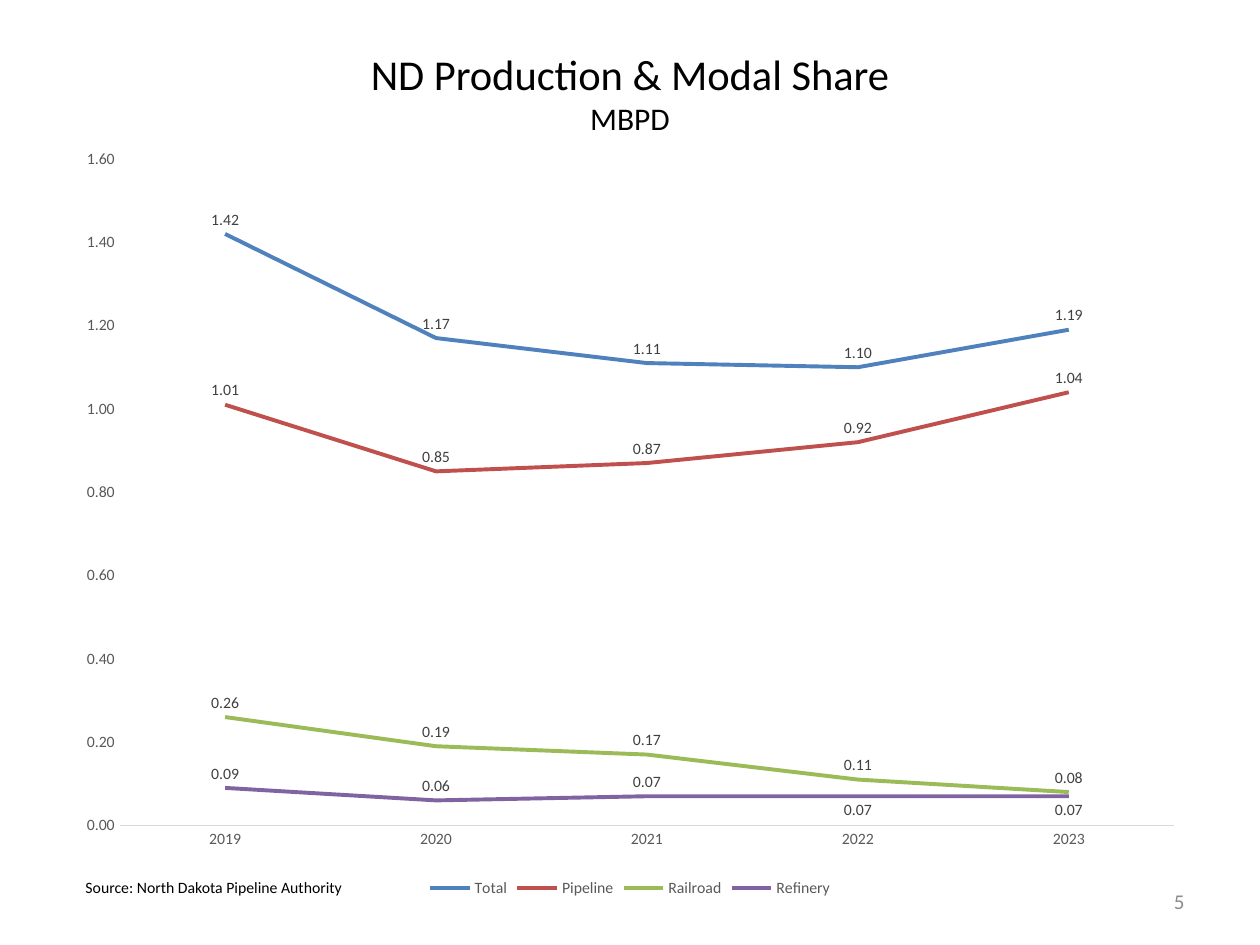
from lxml import etree
from pptx import Presentation
from pptx.chart.data import CategoryChartData
from pptx.dml.color import RGBColor
from pptx.enum.chart import XL_CHART_TYPE as ChartType, XL_LABEL_POSITION as LabelPosition
from pptx.enum.chart import XL_LEGEND_POSITION as LegendPosition, XL_TICK_MARK as TickMark
from pptx.enum.text import MSO_ANCHOR as Anchor, MSO_AUTO_SIZE as AutoSize, PP_ALIGN as Align
from pptx.oxml.ns import qn
from pptx.util import Inches, Pt

COLORS = {
    "text": "000000", "number": "8C8C8C", "axis_text": "595959",
    "label": "404040", "axis_line": "D9D9D9",
    "Total": "4F81BD", "Pipeline": "C0504D", "Railroad": "9BBB59", "Refinery": "8064A2",
}
YEARS = ["2019", "2020", "2021", "2022", "2023"]
SERIES = {
    "Total": [1.42, 1.17, 1.11, 1.10, 1.19],
    "Pipeline": [1.01, 0.85, 0.87, 0.92, 1.04],
    "Railroad": [0.26, 0.19, 0.17, 0.11, 0.08],
    "Refinery": [0.09, 0.06, 0.07, 0.07, 0.07],
}


def format_font(font, size, color):
    font.name = "Calibri"
    font.size = Pt(size)
    font.bold = False
    font.color.rgb = RGBColor.from_string(COLORS[color])


def write_text(box, text, size=12, color="text", align=Align.LEFT, anchor=Anchor.TOP):
    """Fill the box's only paragraph and return that paragraph."""
    frame = box.text_frame
    frame.word_wrap = True
    frame.auto_size = AutoSize.NONE
    frame.vertical_anchor = anchor
    para = frame.paragraphs[0]
    para.alignment = align
    span = para.add_run()
    span.text = text
    format_font(span.font, size, color)
    return para


deck = Presentation()
deck.slide_width, deck.slide_height = Inches(10), Inches(7.5)
page = deck.slides.add_slide(deck.slide_layouts[5])

# Title with its unit on a second line
title = page.shapes.title
title.left, title.top, title.width, title.height = map(Inches, (0.5, 0.3, 9, 0.87))
heading = write_text(title, "ND Production & Modal Share", size=24.3,
                     align=Align.CENTER, anchor=Anchor.MIDDLE)
heading.add_line_break()
unit = heading.add_run()
unit.text = "MBPD"
format_font(unit.font, 18, "text")

# Page number and source
number_box = page.shapes.add_textbox(Inches(7.17), Inches(6.95), Inches(2.33), Inches(0.4))
write_text(number_box, "5", color="number", align=Align.RIGHT, anchor=Anchor.MIDDLE)
source_box = page.shapes.add_textbox(Inches(0.58), Inches(6.92), Inches(2.25), Inches(0.25))
write_text(source_box, "Source: North Dakota Pipeline Authority", size=9)

# Line chart
data = CategoryChartData(number_format="0.00")
data.categories = YEARS
for name, values in SERIES.items():
    data.add_series(name, values)
chart = page.shapes.add_chart(ChartType.LINE, Inches(0.5), Inches(1.08),
                              Inches(9), Inches(6.08), data).chart
format_font(chart.font, 10, "text")
chart.has_title = False
chart.has_legend = True
chart.legend.position = LegendPosition.BOTTOM
chart.legend.include_in_layout = False
format_font(chart.legend.font, 9, "axis_text")

for axis in (chart.category_axis, chart.value_axis):
    axis.major_tick_mark = axis.minor_tick_mark = TickMark.NONE
    axis.has_major_gridlines = False
    format_font(axis.tick_labels.font, 9, "axis_text")
category_line = chart.category_axis.format.line
category_line.width = Pt(0.75)
category_line.color.rgb = RGBColor.from_string(COLORS["axis_line"])
value_axis = chart.value_axis
value_axis.format.line.fill.background()
value_axis.minimum_scale, value_axis.maximum_scale, value_axis.major_unit = 0, 1.6, 0.2
value_axis.tick_labels.number_format = "0.00"
value_axis.tick_labels.number_format_is_linked = False

plot = chart.plots[0]
plot.vary_by_categories = False
for series in plot.series:
    series.smooth = False
    series.format.line.width = Pt(2.25)
    series.format.line.color.rgb = RGBColor.from_string(COLORS[series.name])
    labels = series.data_labels
    labels.show_value = True
    labels.number_format = "0.00"
    labels.number_format_is_linked = False
    labels.position = LabelPosition.BELOW if series.name == "Refinery" else LabelPosition.ABOVE
    format_font(labels.font, 9, "label")
    if series.name == "Refinery":
        for index in range(3):
            label = series.points[index].data_label
            format_font(label.font, 9, "label")
            label.position = LabelPosition.ABOVE

# Fixed inner plot area, as fractions of the chart
plot_area = chart.element.find(".//" + qn("c:plotArea"))
layout = plot_area.find(qn("c:layout"))
if layout is None:
    layout = etree.Element(qn("c:layout"))
    plot_area.insert(0, layout)
manual = etree.SubElement(layout, qn("c:manualLayout"))
for tag, value in (("layoutTarget", "inner"), ("xMode", "edge"), ("yMode", "edge"),
                   ("x", "0.05"), ("y", "0.03"), ("w", "0.93"), ("h", "0.87")):
    etree.SubElement(manual, qn("c:" + tag)).set("val", value)

deck.save("out.pptx")
